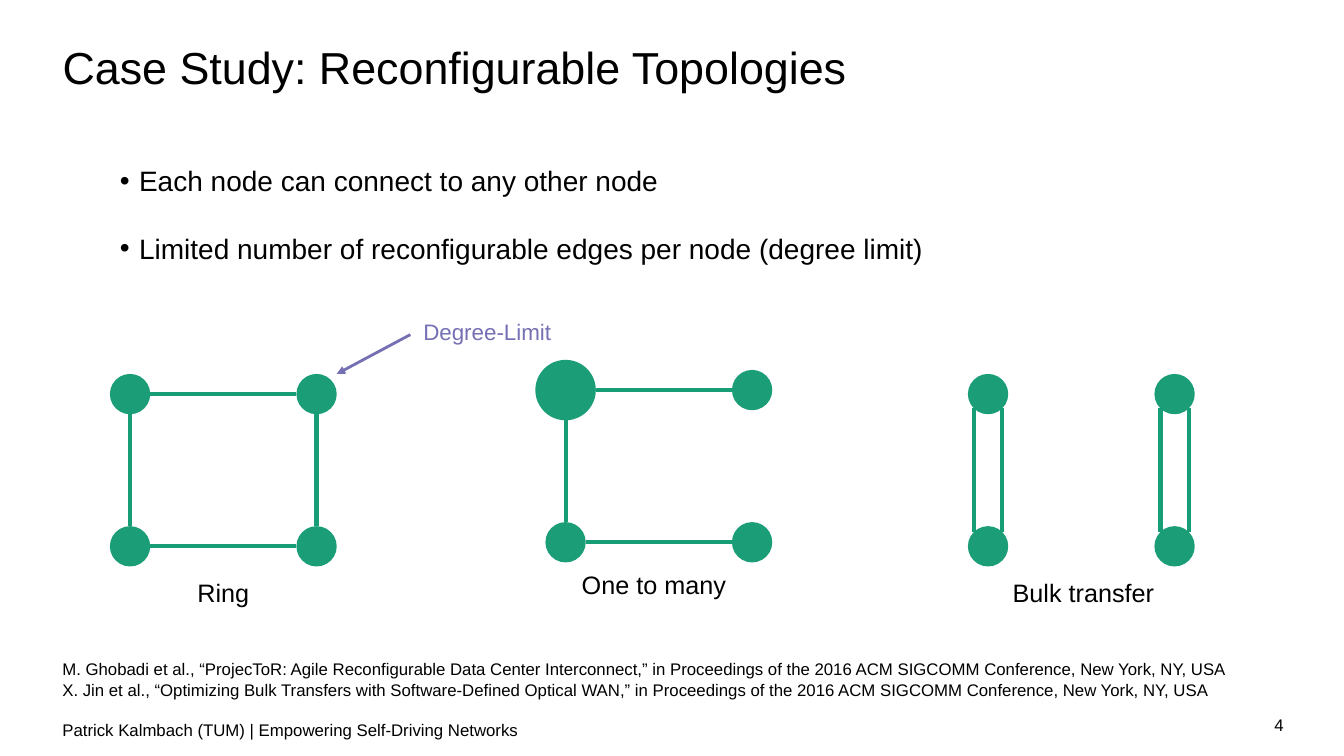
from pptx import Presentation
from pptx.dml.color import RGBColor
from pptx.enum.shapes import MSO_CONNECTOR, MSO_SHAPE
from pptx.enum.text import MSO_ANCHOR, MSO_AUTO_SIZE, PP_ALIGN
from pptx.oxml.ns import qn
from pptx.util import Emu, Pt
from lxml.etree import SubElement

COLORS = {"text": "000000", "node": "1B9E77", "edge": "179E76", "limit": "7570B3"}
RADIUS = 20
HUB_RADIUS = 30
PITCH_X, PITCH_Y = 185, 151
STRAND_OFFSET = 14


def px(length):
    return Emu(length * 9144)


class SlideBuilder:
    font = "Arial"

    def __init__(self, presentation):
        self.slide = presentation.slides.add_slide(presentation.slide_layouts[5])
        self.shapes = self.slide.shapes

    def start_group(self):
        self.shapes = self.slide.shapes.add_group_shape().shapes

    def end_group(self):
        self.shapes = self.slide.shapes

    def format_text(self, shape, lines, size, color="text", align=PP_ALIGN.LEFT,
                    anchor=MSO_ANCHOR.MIDDLE, grow=False, spacing=None, bullet=False):
        frame = shape.text_frame
        frame.word_wrap = True
        frame.vertical_anchor = anchor
        frame.auto_size = MSO_AUTO_SIZE.SHAPE_TO_FIT_TEXT if grow else MSO_AUTO_SIZE.NONE
        frame.text = "\n".join(lines)
        for paragraph in frame.paragraphs:
            paragraph.alignment = align
            if spacing:
                paragraph.line_spacing = spacing
            if bullet:
                properties = paragraph._p.get_or_add_pPr()
                properties.set("marL", str(px(19)))
                properties.set("indent", str(px(-19)))
                SubElement(properties, qn("a:buFont"), typeface=self.font)
                SubElement(properties, qn("a:buChar"), char="•")
            paragraph.font.name = self.font
            paragraph.font.size = Pt(size)
            paragraph.font.color.rgb = RGBColor.from_string(COLORS[color])

    def title(self, text, left, top, width, height):
        title = self.slide.shapes.title
        title.left, title.top, title.width, title.height = map(px, (left, top, width, height))
        self.format_text(title, [text], 32, spacing=1.25)

    def text(self, lines, left, top, width, height, size, **style):
        box = self.shapes.add_textbox(*map(px, (left, top, width, height)))
        self.format_text(box, lines, size, **style)

    def label(self, text, left, top):
        self.text([text], left, top, PITCH_X, 40, 18, align=PP_ALIGN.CENTER, grow=True)

    def node(self, x, y, radius=RADIUS):
        bounds = map(px, (x - radius, y - radius, 2 * radius, 2 * radius))
        node = self.shapes.add_shape(MSO_SHAPE.OVAL, *bounds)
        node.shadow.inherit = False
        node.fill.solid()
        node.fill.fore_color.rgb = RGBColor.from_string(COLORS["node"])
        node.line.fill.background()

    def line(self, x1, y1, x2, y2, color="edge", width=3, arrow=False):
        connector = self.shapes.add_connector(MSO_CONNECTOR.STRAIGHT, *map(px, (x1, y1, x2, y2)))
        connector.line.color.rgb = RGBColor.from_string(COLORS[color])
        connector.line.width = Pt(width)
        properties = connector._element.spPr
        if arrow:
            SubElement(properties.find(qn("a:ln")), qn("a:tailEnd"), type="triangle")
        SubElement(properties, qn("a:effectLst"))

    def square(self, x, y, first_radius=RADIUS):
        right, bottom = x + PITCH_X, y + PITCH_Y
        self.node(x, y, first_radius)
        for corner in ((x, bottom), (right, y), (right, bottom)):
            self.node(*corner)
        return right, bottom

    def ring(self, x, y):
        self.start_group()
        right, bottom = self.square(x, y)
        for column in (x, right):
            self.line(column, y + RADIUS, column, bottom - RADIUS)
        for row in (y, bottom):
            self.line(x + RADIUS, row, right - RADIUS, row)
        self.line(407, 332, 334, 371, "limit", 2, arrow=True)
        self.text(["Degree-Limit"], 410, 310, 170, 37, 16, color="limit", grow=True)
        self.label("Ring", x, 568)
        self.end_group()

    def one_to_many(self, x, y):
        self.start_group()
        right, bottom = self.square(x, y, HUB_RADIUS)
        self.line(x + HUB_RADIUS, y, right - RADIUS, y)
        self.line(x + RADIUS, bottom, right - RADIUS, bottom)
        self.line(x, bottom - RADIUS, x, y + HUB_RADIUS)
        self.label("One to many", x - 5, 560)
        self.end_group()

    def bulk_transfer(self, x, y):
        self.start_group()
        right, bottom = self.square(x, y)
        for column in (x, right):
            for offset in (-STRAND_OFFSET, STRAND_OFFSET):
                self.line(column + offset, y + STRAND_OFFSET,
                          column + offset, bottom - STRAND_OFFSET)
        self.label("Bulk transfer", x + 2, 568)
        self.end_group()


def main():
    presentation = Presentation()
    presentation.slide_width, presentation.slide_height = px(1333), px(750)
    builder = SlideBuilder(presentation)
    builder.title("Case Study: Reconfigurable Topologies", 52, 40, 1045, 39)
    builder.text(["Each node can connect to any other node",
                  "Limited number of reconfigurable edges per node (degree limit)"],
                 109, 129, 1078, 134, 20, grow=True, spacing=2.0, bullet=True)
    builder.ring(129, 391)
    builder.one_to_many(561, 387)
    builder.bulk_transfer(980, 391)
    builder.text(["M. Ghobadi et al., “ProjecToR: Agile Reconfigurable Data Center Interconnect,” "
                  "in Proceedings of the 2016 ACM SIGCOMM Conference, New York, NY, USA",
                  "X. Jin et al., “Optimizing Bulk Transfers with Software-Defined Optical WAN,” "
                  "in Proceedings of the 2016 ACM SIGCOMM Conference, New York, NY, USA"],
                 52, 649, 1360, 50, 12, anchor=MSO_ANCHOR.TOP, grow=True)
    builder.text(["Patrick Kalmbach (TUM) | Empowering Self-Driving Networks"],
                 52, 704, 1149, 39, 12)
    builder.text(["4"], 1201, 704, 82, 39, 12, align=PP_ALIGN.RIGHT, anchor=MSO_ANCHOR.TOP)
    presentation.save("out.pptx")


if __name__ == "__main__":
    main()
